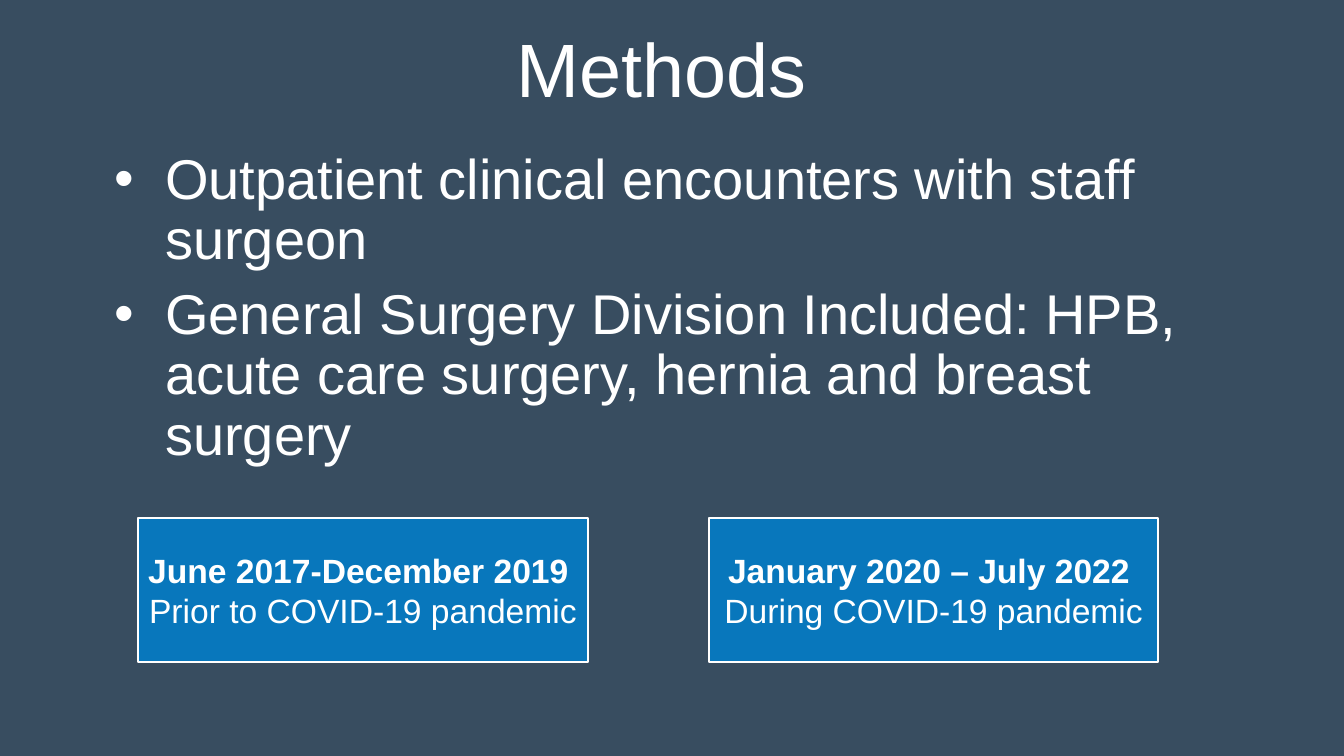
from lxml.etree import SubElement
from pptx import Presentation
from pptx.dml.color import RGBColor
from pptx.enum.shapes import MSO_SHAPE
from pptx.enum.text import MSO_ANCHOR, MSO_AUTO_SIZE, PP_ALIGN
from pptx.oxml.ns import qn
from pptx.util import Inches, Pt

TITLE = "Methods "
CRITERIA = [
    "Outpatient clinical encounters with staff surgeon",
    "General Surgery Division Included: HPB, acute care surgery, hernia and breast surgery",
]
PERIODS = [
    ("June 2017-December 2019 ", "Prior to COVID-19 pandemic"),
    ("January 2020 – July 2022 ", "During COVID-19 pandemic"),
]

SLATE = RGBColor(0x38, 0x4D, 0x60)
BLUE = RGBColor(0x08, 0x77, 0xBC)
WHITE = RGBColor(0xFF, 0xFF, 0xFF)

PERIOD_LEFT, PERIOD_TOP = 1.37, 5.14
PERIOD_WIDTH, PERIOD_HEIGHT = 4.46, 1.43
PERIOD_STEP = 5.66


def add_bullet(paragraph, indent):
    properties = paragraph._p.get_or_add_pPr()
    properties.set("marL", str(indent))
    properties.set("indent", str(-indent))
    SubElement(properties, qn("a:buFont")).set("typeface", "Arial")
    SubElement(properties, qn("a:buChar")).set("char", "•")


def write(frame, lines, size, align=PP_ALIGN.CENTER, anchor=MSO_ANCHOR.MIDDLE,
          spacing=None, gap=0, bullet_indent=None, bold_first=False):
    frame.word_wrap = True
    frame.auto_size = MSO_AUTO_SIZE.NONE
    frame.vertical_anchor = anchor
    for index, line in enumerate(lines):
        paragraph = frame.paragraphs[0] if index == 0 else frame.add_paragraph()
        paragraph.alignment = align
        if spacing:
            paragraph.line_spacing = spacing
        paragraph.space_before = Pt(gap if index else 0)
        if bullet_indent:
            add_bullet(paragraph, bullet_indent)
        run = paragraph.add_run()
        run.text = line
        run.font.name = "Arial"
        run.font.size = Pt(size)
        run.font.bold = bold_first and index == 0
        run.font.color.rgb = WHITE


def main():
    deck = Presentation()
    deck.slide_width, deck.slide_height = Inches(13.33), Inches(7.5)
    slide = deck.slides.add_slide(deck.slide_layouts[5])
    slide.background.fill.solid()
    slide.background.fill.fore_color.rgb = SLATE

    title = slide.shapes.title
    title.left, title.top = Inches(0), Inches(0)
    title.width, title.height = deck.slide_width, Inches(1.45)
    write(title.text_frame, [TITLE], 54, spacing=0.9)

    for index, period in enumerate(PERIODS):
        box = slide.shapes.add_shape(
            MSO_SHAPE.RECTANGLE,
            Inches(PERIOD_LEFT + index * PERIOD_STEP), Inches(PERIOD_TOP),
            Inches(PERIOD_WIDTH), Inches(PERIOD_HEIGHT))
        box.shadow.inherit = False
        box.fill.solid()
        box.fill.fore_color.rgb = BLUE
        box.line.color.rgb = WHITE
        box.line.width = Pt(1.5)
        write(box.text_frame, period, 24, bold_first=True)

    criteria = slide.shapes.add_textbox(
        Inches(1.04), Inches(1.45), Inches(11.5), Inches(1.34))
    write(criteria.text_frame, CRITERIA, 40, align=PP_ALIGN.LEFT,
          anchor=MSO_ANCHOR.TOP, spacing=0.9, gap=10, bullet_indent=Inches(0.5))

    deck.save("out.pptx")


if __name__ == "__main__":
    main()
